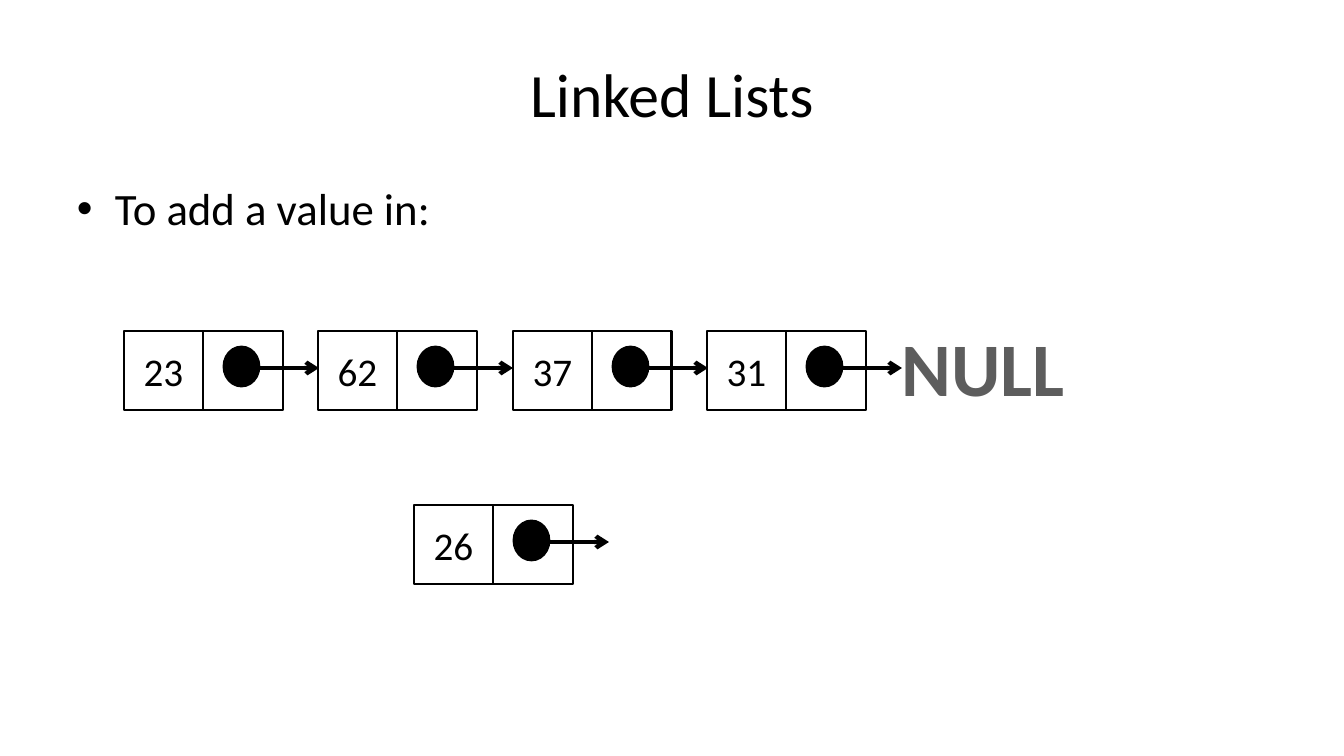
import pptx
import pptx.util
import pptx.dml.color
import pptx.enum.shapes
import pptx.enum.text
import pptx.oxml
import pptx.oxml.ns

PX = 914400 / 100.8
FONT = "Calibri"
COLOURS = {"ink": "000000", "null": "5D5D5D"}
SHAPE = pptx.enum.shapes.MSO_SHAPE
CENTER = pptx.enum.text.PP_ALIGN.CENTER
MIDDLE = pptx.enum.text.MSO_ANCHOR.MIDDLE

CELL = 79
LIST_LEFT, LIST_TOP = 124, 331
VALUES = ["23", "62", "37", "31"]


def px(*lengths):
    return [pptx.util.Emu(round(length * PX)) for length in lengths]


def colour(name):
    return pptx.dml.color.RGBColor.from_string(COLOURS[name])


def add_xml(parent, markup):
    parent.append(pptx.oxml.parse_xml(
        markup.replace("/>", f" {pptx.oxml.ns.nsdecls('a')}/>")))


def write(frame, text, size, ink="ink", bold=False):
    """Put one styled run in the frame's first paragraph and return the paragraph."""
    para = frame.paragraphs[0]
    span = para.add_run()
    span.text = text
    span.font.name = FONT
    span.font.size = pptx.util.Pt(size)
    span.font.bold = bold
    span.font.color.rgb = colour(ink)
    return para


def add_outlined(page, kind, box, filled=False):
    shape = page.shapes.add_shape(kind, *px(*box))
    shape.shadow.inherit = False
    if filled:
        shape.fill.solid()
        shape.fill.fore_color.rgb = colour("ink")
    else:
        shape.fill.background()
    shape.line.color.rgb = colour("ink")
    shape.line.width = pptx.util.Pt(2)
    return shape


def add_arrow(page, left, right, y):
    arrow = page.shapes.add_connector(
        pptx.enum.shapes.MSO_CONNECTOR.STRAIGHT, *px(left, y, right, y))
    arrow.line.color.rgb = colour("ink")
    arrow.line.width = pptx.util.Pt(3)
    add_xml(arrow.line._get_or_add_ln(), '<a:tailEnd type="arrow"/>')
    add_xml(arrow._element.spPr, "<a:effectLst/>")


def add_node(page, left, top, value):
    """Draw a value cell and a pointer cell with its outgoing arrow."""
    cell = add_outlined(page, SHAPE.RECTANGLE, (left, top, CELL, CELL))
    cell.text_frame.vertical_anchor = MIDDLE
    write(cell.text_frame, value, 28).alignment = CENTER
    add_outlined(page, SHAPE.OVAL, (left + 100, top + 16, 35, 39), filled=True)
    add_arrow(page, left + 135, left + 195, top + 37)
    add_outlined(page, SHAPE.RECTANGLE, (left + CELL, top, CELL + 1, CELL))


def add_text_box(page, box):
    frame = page.shapes.add_textbox(*px(*box)).text_frame
    frame.word_wrap = True
    return frame


def add_title(page, box):
    frame = add_text_box(page, box)
    frame.vertical_anchor = MIDDLE
    write(frame, "Linked Lists", 44).alignment = CENTER


def add_body(page, box):
    para = write(add_text_box(page, box), "To add a value in:", 32)
    properties = para._p.get_or_add_pPr()
    indent = px(38)[0]
    properties.set("marL", str(indent))
    properties.set("indent", str(-indent))
    add_xml(properties, '<a:buFont typeface="Arial"/>')
    add_xml(properties, '<a:buChar char="•"/>')


def add_null(page, box):
    frame = add_text_box(page, box)
    frame.word_wrap = False
    write(frame, "NULL", 54, "null", bold=True).alignment = CENTER


def add_linked_list(page, left, top):
    for index, value in enumerate(VALUES):
        add_node(page, left + index * 389 // 2, top, value)
    add_null(page, (left + 767, top - 15, 185, 102))


def main():
    deck = pptx.Presentation()
    deck.slide_width, deck.slide_height = px(1344, 756)
    page = deck.slides.add_slide(deck.slide_layouts[6])
    add_title(page, (67, 30, 1210, 126))
    add_body(page, (67, 176, 1210, 499))
    add_linked_list(page, LIST_LEFT, LIST_TOP)
    add_node(page, 414, 505, "26")
    deck.save("out.pptx")


if __name__ == "__main__":
    main()
